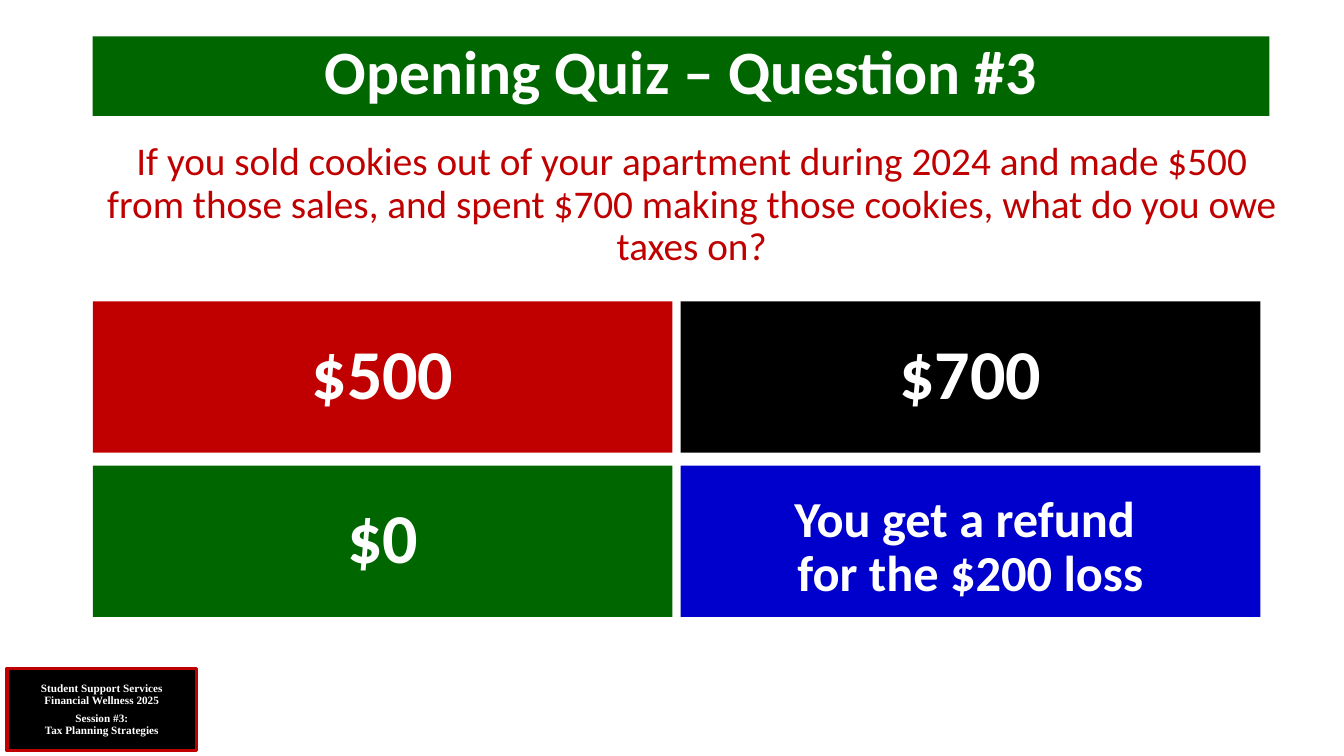
from dataclasses import dataclass

from pptx import Presentation
from pptx import util as u
from pptx.dml.color import RGBColor
from pptx.enum import shapes, text


@dataclass(frozen=True)
class Theme:
    """Colours, fonts and type sizes of the quiz."""
    red: str = "C00000"
    green: str = "006600"
    blue: str = "0000CC"
    black: str = "000000"
    white: str = "FFFFFF"
    body_font: str = "Calibri"
    footer_font: str = "Times New Roman"
    title_size: int = 44
    question_size: int = 28
    answer_size: int = 50
    long_answer_size: int = 36
    footer_size: int = 8


class QuizSlide:
    """Holds the theme and the current slide and draws each kind of element."""

    def __init__(self, presentation, theme):
        """Add a blank slide to the presentation."""
        self.theme = theme
        self.slide = presentation.slides.add_slide(presentation.slide_layouts[6])

    def set_text(self, shape, paragraphs, size, color, font=None, bold=True,
                 anchor=text.MSO_ANCHOR.MIDDLE, gap=0, top_inset=0.05):
        """Fill a shape with centred paragraphs in one style."""
        frame = shape.text_frame
        frame.word_wrap = True
        frame.vertical_anchor = anchor
        frame.margin_top = u.Inches(top_inset)
        for index, words in enumerate(paragraphs):
            paragraph = frame.add_paragraph() if index else frame.paragraphs[0]
            paragraph.text = words
            paragraph.alignment = text.PP_ALIGN.CENTER
            paragraph.line_spacing = 0.9
            paragraph.space_before = u.Pt(gap if index else 0)
            paragraph.font.name = font or self.theme.body_font
            paragraph.font.size = u.Pt(size)
            paragraph.font.bold = bold
            paragraph.font.color.rgb = RGBColor.from_string(color)

    def block(self, box, fill, paragraphs, size, border=None, **style):
        """Draw a filled rectangle with white text."""
        shape = self.slide.shapes.add_shape(
            shapes.MSO_SHAPE.RECTANGLE, *map(u.Inches, box))
        shape.shadow.inherit = False
        shape.fill.solid()
        shape.fill.fore_color.rgb = RGBColor.from_string(fill)
        if border:
            shape.line.color.rgb = RGBColor.from_string(border)
            shape.line.width = u.Pt(2.25)
        else:
            shape.line.fill.background()
        self.set_text(shape, paragraphs, size, self.theme.white, **style)

    def question(self, box, words):
        """Draw the question as a plain text box."""
        shape = self.slide.shapes.add_textbox(*map(u.Inches, box))
        self.set_text(shape, [words], self.theme.question_size, self.theme.red,
                      bold=False, anchor=text.MSO_ANCHOR.TOP)

    def answers(self, left, top, answers):
        """Draw the answers as a grid of two columns."""
        width, height, column_gap, row_gap = 5.75, 1.5, 0.08, 0.13
        for index, (words, fill, size, top_inset) in enumerate(answers):
            row, column = divmod(index, 2)
            box = (left + column * (width + column_gap),
                   top + row * (height + row_gap), width, height)
            self.block(box, fill, [words], size, top_inset=top_inset)


def main():
    """Build the quiz slide and save it."""
    presentation = Presentation()
    presentation.slide_width = u.Inches(13.33)
    presentation.slide_height = u.Inches(7.5)
    theme = Theme()
    quiz = QuizSlide(presentation, theme)
    left = 0.92

    quiz.block((0.07, 6.63, 1.88, 0.82), theme.black,
               ["Student Support Services\nFinancial Wellness 2025",
                "Session #3:\nTax Planning Strategies"],
               theme.footer_size, border=theme.red, font=theme.footer_font, gap=4)
    quiz.block((left, 0.36, 11.67, 0.79), theme.green,
               ["Opening Quiz – Question #3"], theme.title_size,
               anchor=text.MSO_ANCHOR.TOP)
    quiz.question((left, 1.36, 11.88, 5.4),
                  "If you sold cookies out of your apartment during 2024 and made "
                  "$500 from those sales, and spent $700 making those cookies, "
                  "what do you owe taxes on?")
    quiz.answers(left, 2.99, [
        ("$500", theme.red, theme.answer_size, 0.05),
        ("$700", theme.black, theme.answer_size, 0.05),
        ("$0", theme.green, theme.answer_size, 0.05),
        ("You get a refund \nfor the $200 loss", theme.blue,
         theme.long_answer_size, 0.19),
    ])
    presentation.save("out.pptx")


if __name__ == "__main__":
    main()
